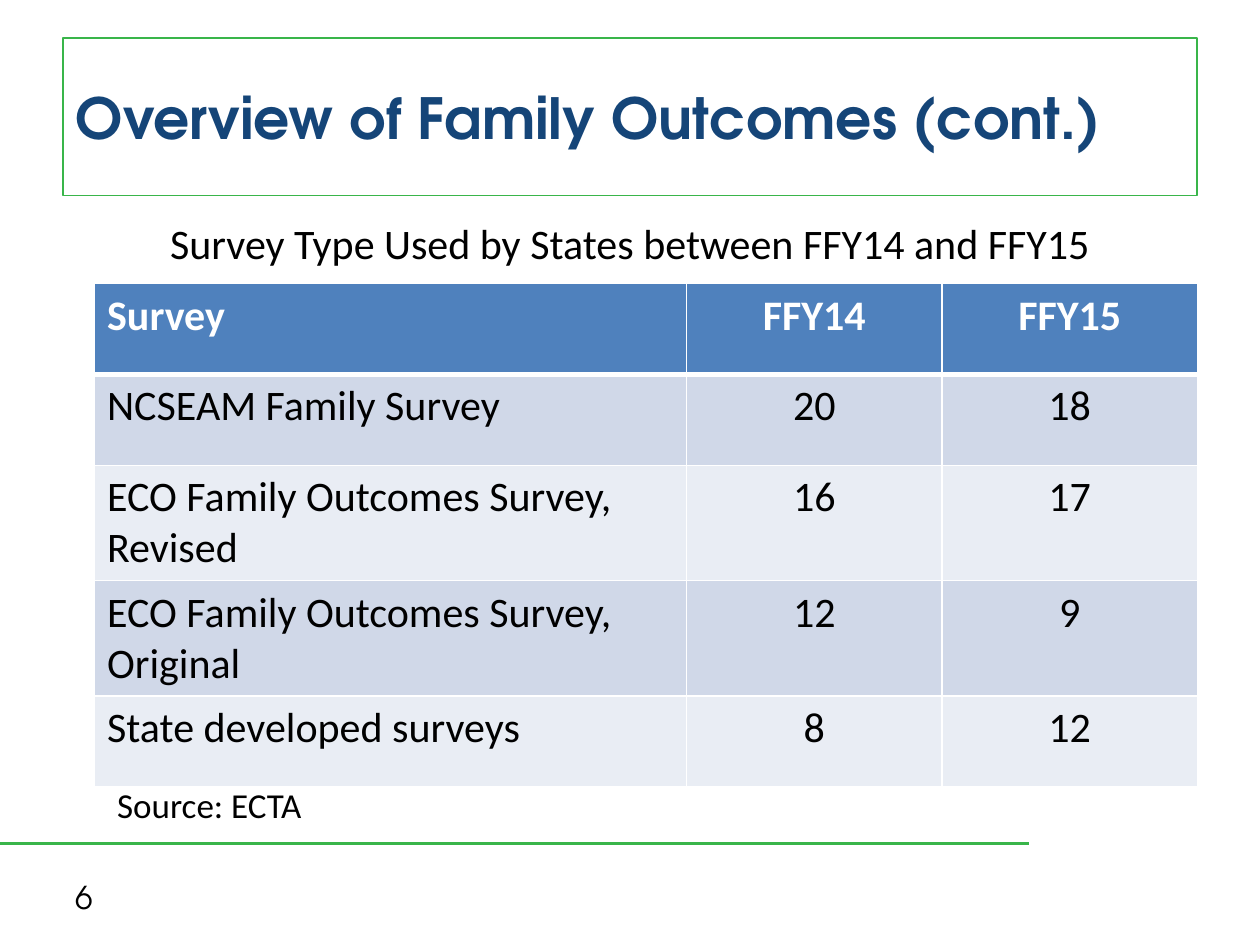
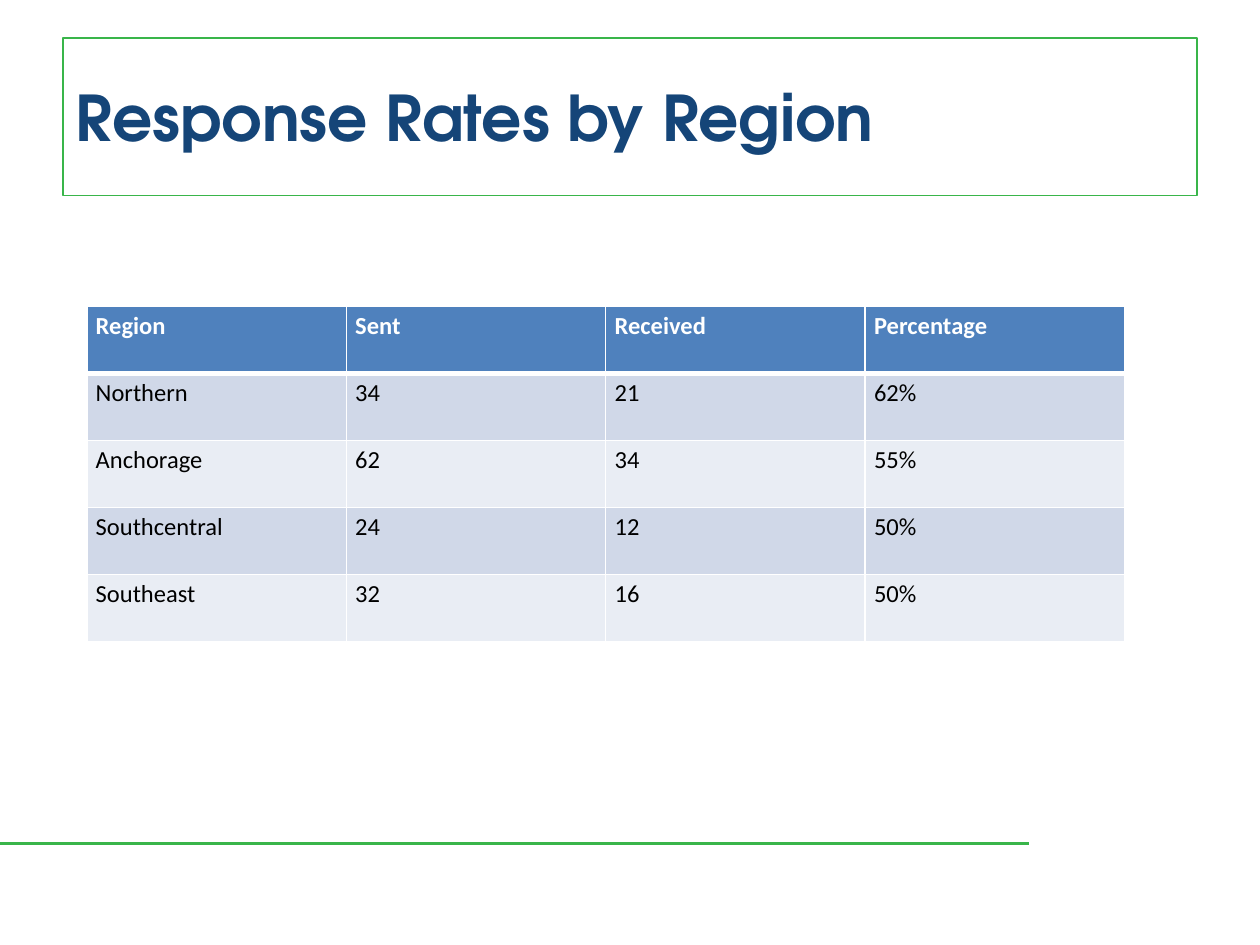
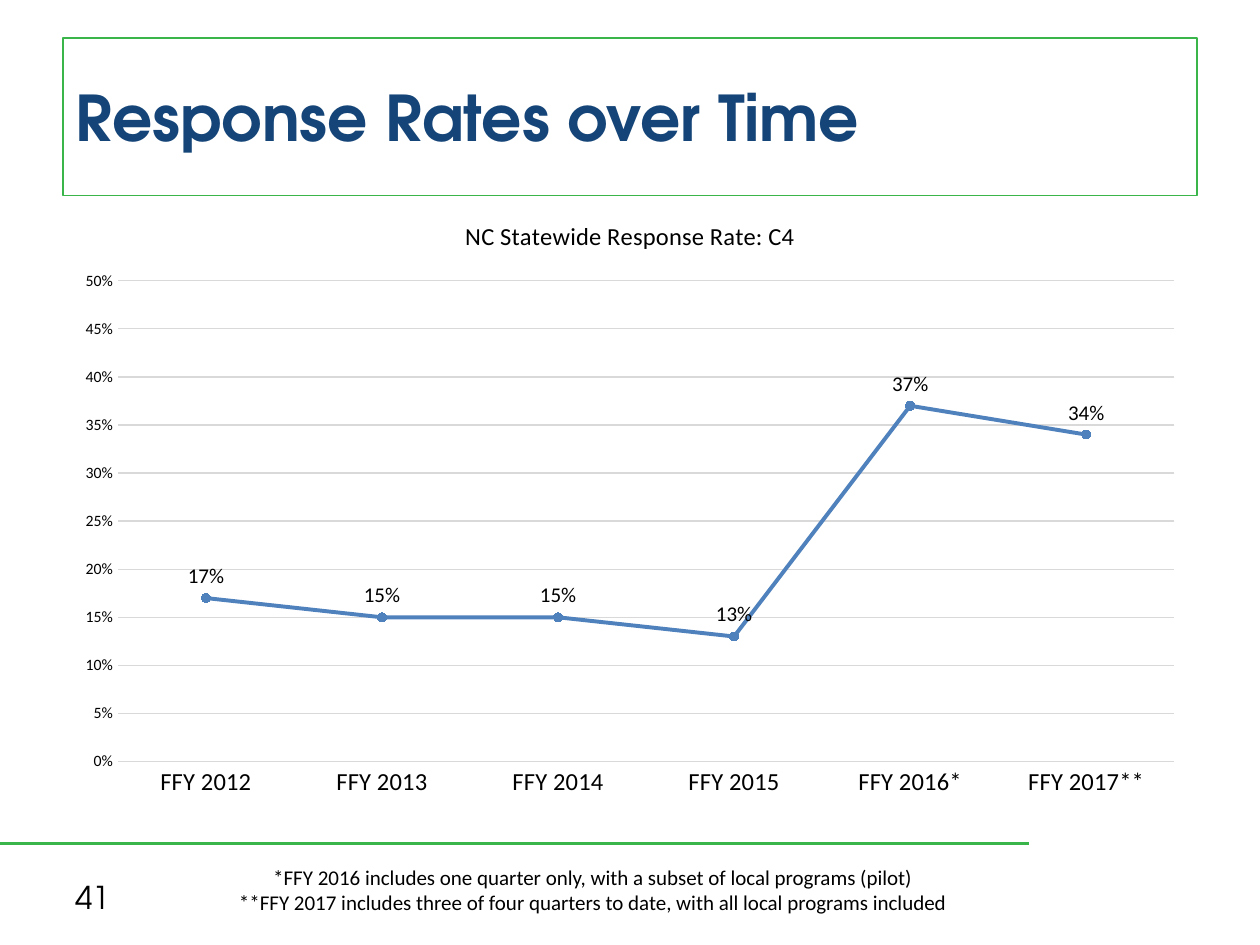
import pptx
import pptx.chart.data
import pptx.dml.color
import pptx.enum.chart
import pptx.enum.shapes
import pptx.enum.text
import pptx.oxml
import pptx.oxml.ns
import pptx.util

Cm, Pt = pptx.util.Cm, pptx.util.Pt
ALIGN = pptx.enum.text.PP_ALIGN
ANCHOR = pptx.enum.text.MSO_ANCHOR

BLACK, WHITE = "000000", "FFFFFF"
GREEN, NAVY, BLUE, GRID = "39B54A", "154578", "4F81BD", "D9D9D9"
BANDS = ("D0D8E8", "E9EDF4")
BODY_FONT, HEAD_FONT = "Calibri", "TeX Gyre Adventor"


def rgb(value):
    return pptx.dml.color.RGBColor.from_string(value)


def assign(obj, values):
    for name, value in values.items():
        setattr(obj, name, value)


def set_font(font, size, color=BLACK, name=BODY_FONT, bold=False):
    assign(font, {"size": Pt(size), "name": name, "bold": bold})
    font.color.rgb = rgb(color)


def set_line(line, color, width):
    line.color.rgb = rgb(color)
    line.width = Pt(width)


def set_fill(fill, color):
    fill.solid()
    fill.fore_color.rgb = rgb(color)


def set_border(cell, edge, width):
    """Draw one white edge (L, R, T or B) of a table cell; call before filling it."""
    ns = pptx.oxml.ns.nsdecls("a")
    cell._tc.get_or_add_tcPr().append(pptx.oxml.parse_xml(
        f'<a:ln{edge} {ns} w="{Pt(width)}"><a:solidFill>'
        f'<a:srgbClr val="{WHITE}"/></a:solidFill></a:ln{edge}>'))


class Deck:
    """Holds the presentation, its shared style and the current slide."""

    def __init__(self):
        self.prs = pptx.Presentation()
        assign(self.prs, {"slide_width": Cm(25.4), "slide_height": Cm(19.05)})
        self.s = None

    def slide(self, title, title_size=36, number=None):
        self.s = self.prs.slides.add_slide(self.prs.slide_layouts[5])
        self.rule()
        if number:
            self.text([number], (1.27, 17.58, 5.92, 1.02), 18,
                      font=HEAD_FONT, anchor=ANCHOR.MIDDLE)
        sp = self.s.shapes.title
        assign(sp, {"left": Cm(1.27), "top": Cm(0.76),
                    "width": Cm(22.86), "height": Cm(3.18)})
        set_line(sp.line, GREEN, 1)
        self.fill_text(sp.text_frame, [title], title_size, NAVY, HEAD_FONT,
                       bold=True, anchor=ANCHOR.MIDDLE)

    def rule(self):
        """Draw the green line above the footer."""
        line = self.s.shapes.add_connector(
            pptx.enum.shapes.MSO_CONNECTOR.STRAIGHT, 0, Cm(17), Cm(20.75), Cm(17))
        set_line(line.line, GREEN, 1.5)
        line._element.spPr.append(pptx.oxml.parse_xml(
            f'<a:effectLst {pptx.oxml.ns.nsdecls("a")}/>'))

    def fill_text(self, tf, lines, size, color=BLACK, font=BODY_FONT, bold=False,
                  align=ALIGN.LEFT, anchor=ANCHOR.TOP):
        assign(tf, {"word_wrap": True, "vertical_anchor": anchor,
                    "auto_size": pptx.enum.text.MSO_AUTO_SIZE.NONE})
        for i, line in enumerate(lines):
            p = tf.add_paragraph() if i else tf.paragraphs[0]
            p.alignment = align
            r = p.add_run()
            r.text = line
            set_font(r.font, size, color, font, bold)

    def text(self, lines, box, size, **style):
        sp = self.s.shapes.add_textbox(*map(Cm, box))
        self.fill_text(sp.text_frame, lines, size, **style)

    def table(self, rows, left, top, widths, row_height, size,
              value_align=ALIGN.LEFT, margins=(0.25, 0.13)):
        table = self.s.shapes.add_table(
            len(rows), len(widths), Cm(left), Cm(top),
            Cm(sum(widths)), Cm(row_height * len(rows))).table
        for column, width in zip(table.columns, widths):
            column.width = Cm(width)
        side, end = map(Cm, margins)
        for i, row in enumerate(rows):
            header = i == 0
            for j, value in enumerate(row):
                cell = table.cell(i, j)
                assign(cell, {"margin_left": side, "margin_right": side,
                              "margin_top": end, "margin_bottom": end})
                for edge in "LRTB":
                    set_border(cell, edge, 3 if (i, edge) in ((0, "B"), (1, "T")) else 1)
                set_fill(cell.fill, BLUE if header else BANDS[(i - 1) % 2])
                p = cell.text_frame.paragraphs[0]
                p.alignment = value_align if j else ALIGN.LEFT
                r = p.add_run()
                r.text = value
                set_font(r.font, size, WHITE if header else BLACK, bold=header)

    def line_chart(self, title, points, box, top_value, step):
        data = pptx.chart.data.CategoryChartData(number_format="0%")
        data.categories = list(points)
        data.add_series(title, list(points.values()))
        enums = pptx.enum.chart
        chart = self.s.shapes.add_chart(
            enums.XL_CHART_TYPE.LINE_MARKERS_STACKED, *map(Cm, box), data).chart
        set_font(chart.font, 10)
        chart.has_legend = False
        chart.has_title = True
        tf = chart.chart_title.text_frame
        tf.text = title
        set_font(tf.paragraphs[0].runs[0].font, 14)

        for axis, size in ((chart.category_axis, 14), (chart.value_axis, 9)):
            assign(axis, {"major_tick_mark": enums.XL_TICK_MARK.NONE,
                          "minor_tick_mark": enums.XL_TICK_MARK.NONE})
            set_font(axis.tick_labels.font, size)
        set_line(chart.category_axis.format.line, GRID, 0.75)
        axis = chart.value_axis
        assign(axis, {"minimum_scale": 0, "maximum_scale": top_value,
                      "major_unit": step, "has_major_gridlines": True})
        assign(axis.tick_labels, {"number_format": "0%",
                                  "number_format_is_linked": False})
        axis.format.line.fill.background()
        set_line(axis.major_gridlines.format.line, GRID, 0.75)

        plot = chart.plots[0]
        plot.vary_by_categories = False
        series = plot.series[0]
        series.smooth = False
        set_line(series.format.line, BLUE, 2.25)
        marker = series.marker
        assign(marker, {"style": enums.XL_MARKER_STYLE.CIRCLE, "size": 5})
        set_fill(marker.format.fill, BLUE)
        set_line(marker.format.line, BLUE, 0.75)
        labels = series.data_labels
        assign(labels, {"show_value": True, "number_format": "0%",
                        "number_format_is_linked": False,
                        "position": enums.XL_LABEL_POSITION.ABOVE})
        set_font(labels.font, 12)


def main():
    deck = Deck()

    deck.slide("Overview of Family Outcomes (cont.)", 32.4, number="6")
    deck.text(["Survey Type Used by States between FFY14 and FFY15"],
              (3.18, 4.27, 19.71, 1.27), 24)
    deck.table([("Survey", "FFY14", "FFY15"),
                ("NCSEAM Family Survey", "20", "18"),
                ("ECO Family Outcomes Survey, Revised", "16", "17"),
                ("ECO Family Outcomes Survey, Original", "12", "9"),
                ("State developed surveys", "8", "12")],
               1.91, 5.72, (11.93, 5.15, 5.15), 1.83, 24, value_align=ALIGN.CENTER)
    deck.text(["Source: ECTA"], (2.11, 15.67, 4.27, 1.12), 20)

    deck.slide("Response Rates by Region")
    deck.table([("Region", "Sent", "Received", "Percentage"),
                ("Northern", "34", "21", "62%"),
                ("Anchorage", "62", "34", "55%"),
                ("Southcentral", "24", "12", "50%"),
                ("Southeast", "32", "16", "50%")],
               1.75, 6.18, (5.23,) * 4, 1.35, 14, margins=(0.18, 0.1))

    deck.slide("Response Rates over Time", number="41")
    deck.line_chart("NC Statewide Response Rate: C4",
                    {"FFY 2012": 0.17, "FFY 2013": 0.15, "FFY 2014": 0.15,
                     "FFY 2015": 0.13, "FFY 2016*": 0.37, "FFY 2017**": 0.34},
                    (1.27, 3.94, 22.86, 12.37), top_value=0.5, step=0.05)
    deck.text(["*FFY 2016 includes one quarter only, with a subset of local programs (pilot)",
               "**FFY 2017 includes three of four quarters to date, "
               "with all local programs included"],
              (2.11, 17.3, 19.69, 1.27), 12, align=ALIGN.CENTER)

    deck.prs.save("out.pptx")


if __name__ == "__main__":
    main()
